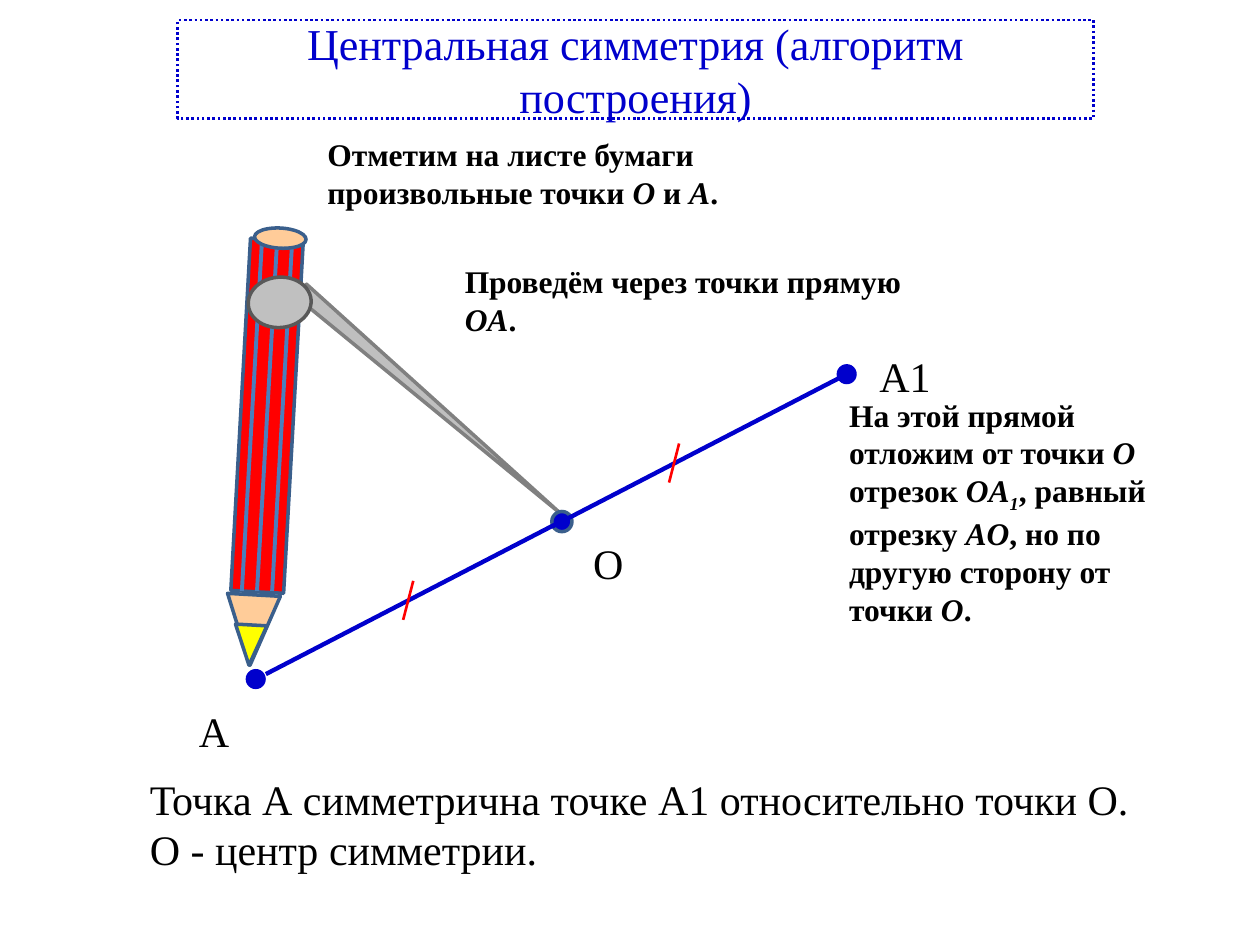
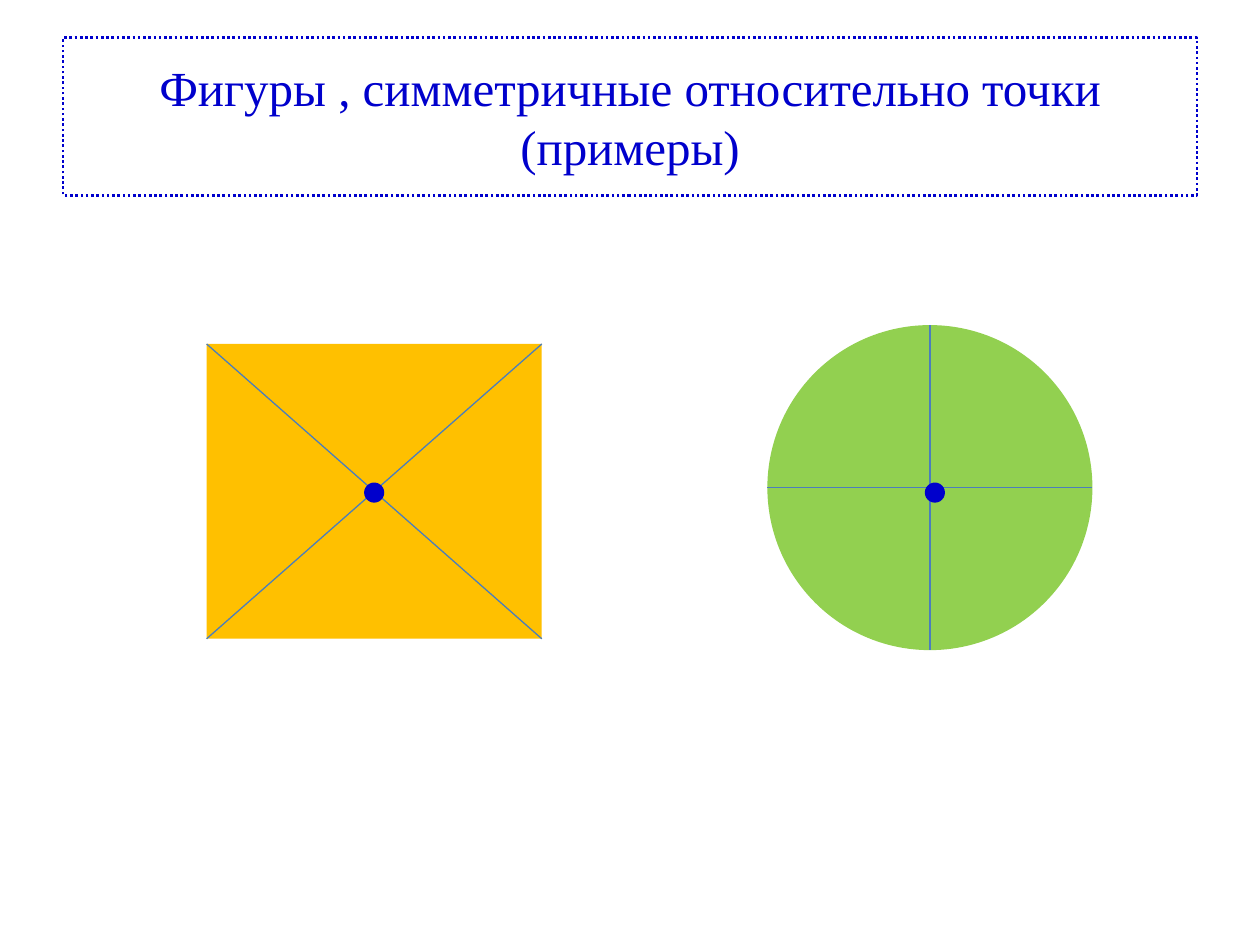
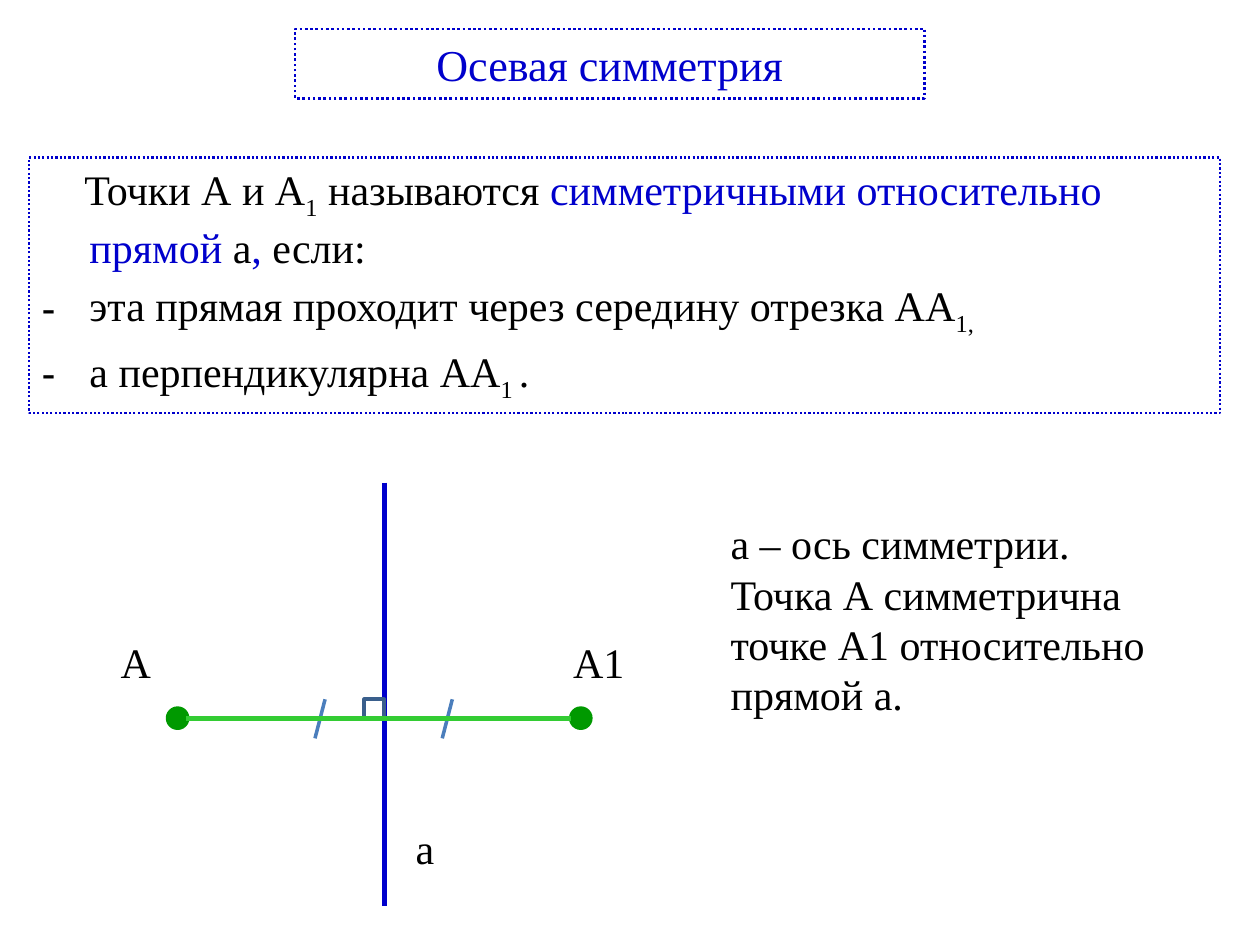
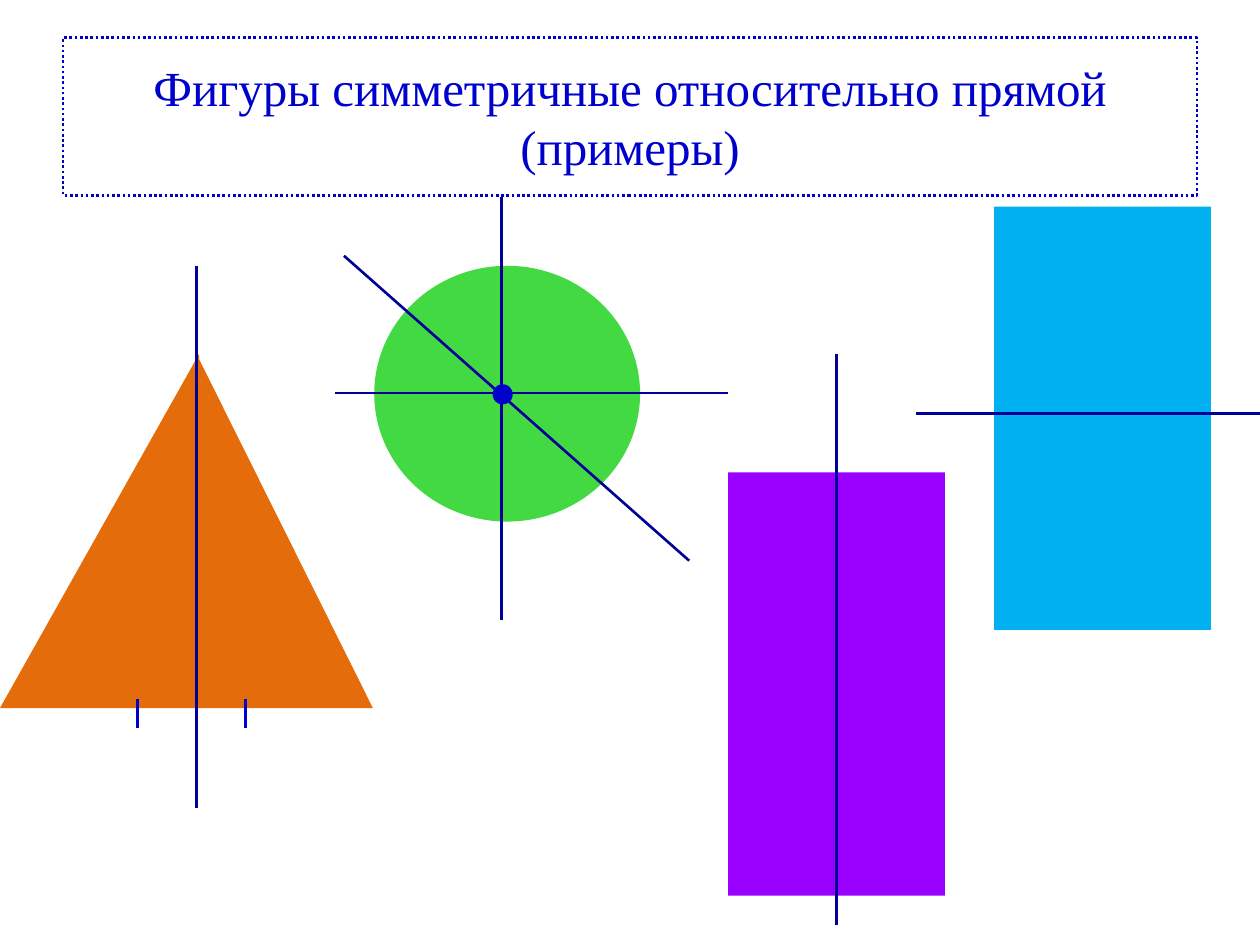
from lxml.etree import SubElement
from pptx import Presentation
from pptx.dml.color import RGBColor
from pptx.enum.dml import MSO_LINE
from pptx.enum.shapes import MSO_CONNECTOR, MSO_SHAPE as Preset
from pptx.enum.text import MSO_ANCHOR, MSO_AUTO_SIZE, PP_ALIGN
from pptx.oxml.ns import qn
from pptx.util import Inches, Pt

FONT = "Times New Roman"
BLACK, BLUE, NAVY, RED = "000000", "0000CC", "000099", "FF0000"
STEEL, SKY = "3A5F8C", "4B7EBC"
GREEN, LIME = "009900", "33CC33"
TITLE_ONLY, TITLE_AND_BODY = 5, 1
DOT = 0.16
TICK = (-0.08, 0.31)
WIDE_TITLE = (0.5, 0.3, 9, 1.25)

TITLES = {
    "algorithm": ("Центральная симметрия (алгоритм построения)", (1.41, 0.16, 7.27, 0.78), 25.2),
    "point figures": ("Фигуры , симметричные относительно точки (примеры)", WIDE_TITLE, 28),
    "axis": ("Осевая симметрия", (2.34, 0.23, 5, 0.55), 25.2),
    "line figures": ("Фигуры симметричные относительно прямой (примеры)", WIDE_TITLE, 28),
}

STEPS = [
    ((2.5, 1.02, 3.67, 0.71), [
        ("Отметим на листе бумаги произвольные точки ", ""), ("O", "italic"),
        (" и ", ""), ("A", "italic"), (".", "")]),
    ((3.59, 2.03, 3.91, 0.71), [
        ("Проведём через точки прямую ", ""), ("OA", "italic"), (".", "")]),
    ((6.64, 3.09, 2.89, 1.92), [
        ("На этой прямой отложим от точки ", ""), ("O", "italic"),
        (" отрезок ", ""), ("OA", "italic"), ("1", "italic sub"),
        (", равный отрезку ", ""), ("AO", "italic"),
        (", но по другую сторону от точки ", ""), ("O", "italic"), (".", "")]),
]
CONCLUSION = [
    [("Точка А симметрична точке А1 относительно точки О.", "")],
    [("О - центр симметрии.", "")],
]
CENTRAL_LABELS = [
    ("А", (1.48, 5.55, 0.45, 0.51)),
    ("А1", (6.88, 2.73, 0.61, 0.51)),
    ("О", (4.61, 4.22, 0.45, 0.51)),
]
PENCIL_BODY = [
    (Preset.ISOSCELES_TRIANGLE, (3.36, 1.83, 0.13, 2.73), "BFBFBF", "808080", 130.7),
    (Preset.RECTANGLE, (1.91, 1.9, 0.42, 2.8), RED, STEEL, 3.2),
    (Preset.ISOSCELES_TRIANGLE, (1.79, 4.72, 0.42, 0.56), "FFCC99", STEEL, 183.2),
    (Preset.ISOSCELES_TRIANGLE, (1.86, 4.96, 0.25, 0.32), "FFFF00", STEEL, 183.2),
]
PENCIL_TOP = [
    (Preset.OVAL, (2.02, 1.81, 0.41, 0.16), "FFCC99", STEEL, 3.2),
    (Preset.OVAL, (1.97, 2.2, 0.5, 0.4), "C0C0C0", "595959", 355.2),
]

DEFINITION = [
    ("", [("Точки А и А", ""), ("1", "sub"), (" называются ", ""),
          ("симметричными относительно прямой ", "blue"), ("а", ""),
          (", ", "blue"), ("если:", "")]),
    ("-", [("эта прямая проходит через середину отрезка АА", ""), ("1,", "sub")]),
    ("-", [("а перпендикулярна АА", ""), ("1 ", "sub"), (".", "")]),
]
AXIS_LABELS = [
    ("А", (0.86, 5, 0.45, 0.51)),
    ("А1", (4.45, 5, 0.7, 0.51)),
    ("а", (3.2, 6.48, 0.23, 0.51)),
]
AXIS_NOTE = [
    [("a – ось симметрии.", "")],
    [("Точка А симметрична точке А1 относительно прямой а.", "")],
]

LINE_FIGURES = [
    (Preset.RECTANGLE, (7.89, 3.28, 1.72, 1.72), "00B0F0"),
    (Preset.RECTANGLE, (7.89, 1.64, 1.72, 1.64), "00B0F0"),
    (Preset.RECTANGLE, (6.64, 3.75, 0.86, 3.36), "9900FF"),
    (Preset.RECTANGLE, (5.78, 3.75, 0.86, 3.36), "9900FF"),
    (Preset.RIGHT_TRIANGLE, (1.56, 2.81, 1.4, 2.81), "E46C0A"),
    (Preset.RIGHT_TRIANGLE, (0, 2.81, 1.58, 2.81), "E46C0A"),
]
SYMMETRY_AXES = [
    ((1.56, 2.11), (1.56, 6.41)),
    ((3.98, 1.56), (3.98, 4.92)),
    ((5.78, 3.12), (2.66, 3.12)),
    ((2.73, 2.03), (5.47, 4.45)),
    ((10, 3.28), (7.27, 3.28)),
    ((6.64, 2.81), (6.64, 7.34)),
]


def color(code):
    return RGBColor.from_string(code)


def lengths(values):
    return [Inches(value) for value in values]


def draw_line(line, code, width):
    line.color.rgb = color(code)
    line.width = Pt(width)


def add_figure(parent, preset, box, fill=None, outline=None, turn=0):
    figure = parent.shapes.add_shape(preset, *lengths(box))
    figure.shadow.inherit = False
    figure.rotation = turn
    if fill:
        figure.fill.solid()
        figure.fill.fore_color.rgb = color(fill)
    else:
        figure.fill.background()
    if outline:
        draw_line(figure.line, outline, 2)
    else:
        figure.line.fill.background()
    return figure


def add_dot(page, left, top, fill=BLUE, outline=None):
    add_figure(page, Preset.OVAL, (left, top, DOT, DOT), fill, outline)


def add_segment(parent, start, end, code, width):
    segment = parent.shapes.add_connector(MSO_CONNECTOR.STRAIGHT, *lengths((*start, *end)))
    draw_line(segment.line, code, width)
    SubElement(segment._element.spPr, qn("a:effectLst"))


def add_tick(page, left, top, code, width):
    add_segment(page, (left, top), (left + TICK[0], top + TICK[1]), code, width)


def write(para, spans, size=24, code=BLACK, bold=False):
    font = para.font
    font.name, font.size, font.bold = FONT, Pt(size), bold
    font.color.rgb = color(code)
    for text, style in spans:
        span = para.add_run()
        span.text = text
        if "italic" in style:
            span.font.italic = True
        if "sub" in style:
            span._r.get_or_add_rPr().set("baseline", "-25000")
        if "blue" in style:
            span.font.color.rgb = color(BLUE)


def add_text(page, box, paragraphs, align=None, wrap=True, **style):
    frame = page.shapes.add_textbox(*lengths(box)).text_frame
    frame.word_wrap = wrap
    for number, spans in enumerate(paragraphs):
        para = frame.add_paragraph() if number else frame.paragraphs[0]
        para.alignment = align
        write(para, spans, **style)


def add_labels(page, labels):
    for text, box in labels:
        add_text(page, box, [[(text, "")]], wrap=False)


def frame_placeholder(holder, box, width):
    holder.left, holder.top, holder.width, holder.height = lengths(box)
    draw_line(holder.line, BLUE, width)
    holder.line.dash_style = MSO_LINE.ROUND_DOT
    holder.text_frame.auto_size = MSO_AUTO_SIZE.NONE
    return holder.text_frame


def add_page(deck, topic, layout=TITLE_ONLY):
    page = deck.slides.add_slide(deck.slide_layouts[layout])
    text, box, size = TITLES[topic]
    frame = frame_placeholder(page.shapes.title, box, 1.5)
    frame.vertical_anchor = MSO_ANCHOR.MIDDLE
    para = frame.paragraphs[0]
    para.alignment = PP_ALIGN.CENTER
    write(para, [(text, "")], size, BLUE)
    return page


def add_pencil(page):
    pencil = page.shapes.add_group_shape()
    for part in PENCIL_BODY:
        add_figure(pencil, *part)
    for top in (2.08, 2.2, 2.32):
        add_segment(pencil, (top, 1.9), (top - 0.16, 4.69), SKY, 2.25)
    for part in PENCIL_TOP:
        add_figure(pencil, *part)


def build_algorithm(deck):
    page = add_page(deck, "algorithm")
    add_dot(page, 1.95, 5.31)
    add_pencil(page)
    add_dot(page, 4.38, 4.06, outline=STEEL)
    add_dot(page, 6.64, 2.89)
    add_segment(page, (2.11, 5.35), (4.45, 4.14), BLUE, 2.5)
    add_segment(page, (4.38, 4.18), (6.72, 2.97), BLUE, 2.5)
    for left, top in ((3.28, 4.61), (5.39, 3.52)):
        add_tick(page, left, top, RED, 1.5)
    add_labels(page, CENTRAL_LABELS)
    add_text(page, (1.09, 6.09, 8.12, 0.91), CONCLUSION, PP_ALIGN.JUSTIFY)
    for box, spans in STEPS:
        add_text(page, box, [spans], size=18, bold=True)


def build_point_figures(deck):
    page = add_page(deck, "point figures")
    left, top, width, height = 1.64, 2.73, 2.66, 2.34
    right, bottom = left + width, top + height
    add_figure(page, Preset.RECTANGLE, (left, top, width, height), "FFC000")
    add_segment(page, (left, top), (right, bottom), SKY, 0.75)
    add_segment(page, (right, top), (left, bottom), SKY, 0.75)

    left, top, size = 6.09, 2.58, 2.58
    middle, center = left + size / 2, top + size / 2
    add_figure(page, Preset.OVAL, (left, top, size, size), "92D050")
    add_segment(page, (middle, top), (middle, top + size), SKY, 0.75)
    add_segment(page, (left, center), (left + size, center), SKY, 0.75)
    for dot_left in (7.34, 2.89):
        add_dot(page, dot_left, 3.83)


def build_axis(deck):
    page = add_page(deck, "axis", TITLE_AND_BODY)
    frame = frame_placeholder(page.placeholders[1], (0.23, 1.25, 9.45, 2.03), 1.25)
    for number, (bullet, spans) in enumerate(DEFINITION):
        para = frame.add_paragraph() if number else frame.paragraphs[0]
        write(para, spans)
        props = para._p.get_or_add_pPr()
        props.set("marL", str(Inches(0.38)))
        props.set("indent", str(Inches(-0.38 if bullet else -0.04)))
        mark = SubElement(props, qn("a:buChar" if bullet else "a:buNone"))
        if bullet:
            mark.set("char", bullet)
        props.insert(0, mark)

    add_segment(page, (3.05, 3.83), (3.05, 7.19), BLUE, 3)
    add_figure(page, Preset.RECTANGLE, (2.89, 5.55, DOT, DOT), outline=STEEL)
    add_labels(page, AXIS_LABELS)
    for left in (1.33, 4.53):
        add_dot(page, left, 5.62, GREEN, GREEN)
    for left in (2.58, 3.59):
        add_tick(page, left, 5.55, SKY, 2)
    add_text(page, (5.7, 4.06, 3.83, 1.72), AXIS_NOTE)
    for start, end in ((2.97, 4.53), (1.48, 3.05)):
        add_segment(page, (start, 5.7), (end, 5.7), LIME, 3)


def build_line_figures(deck):
    page = add_page(deck, "line figures")
    for part in LINE_FIGURES:
        figure = add_figure(page, *part)
    figure._element.spPr.find(qn("a:xfrm")).set("flipH", "1")
    circle = add_figure(page, Preset.OVAL, (2.97, 2.11, 2.11, 2.03), "00CC00")
    tint = circle._element.spPr.find(qn("a:solidFill"))[0]
    SubElement(tint, qn("a:alpha")).set("val", "74000")
    for start, end in SYMMETRY_AXES:
        add_segment(page, start, end, NAVY, 1.5)
    for left in (1.09, 1.95):
        add_segment(page, (left, 5.55), (left, 5.78), BLUE, 1.5)
    add_dot(page, 3.91, 3.05)


def main():
    """Build the four slides on central and axial symmetry."""
    deck = Presentation()
    deck.slide_width, deck.slide_height = Inches(10), Inches(7.5)
    for build in (build_algorithm, build_point_figures, build_axis, build_line_figures):
        build(deck)
    deck.save("out.pptx")


if __name__ == "__main__":
    main()
